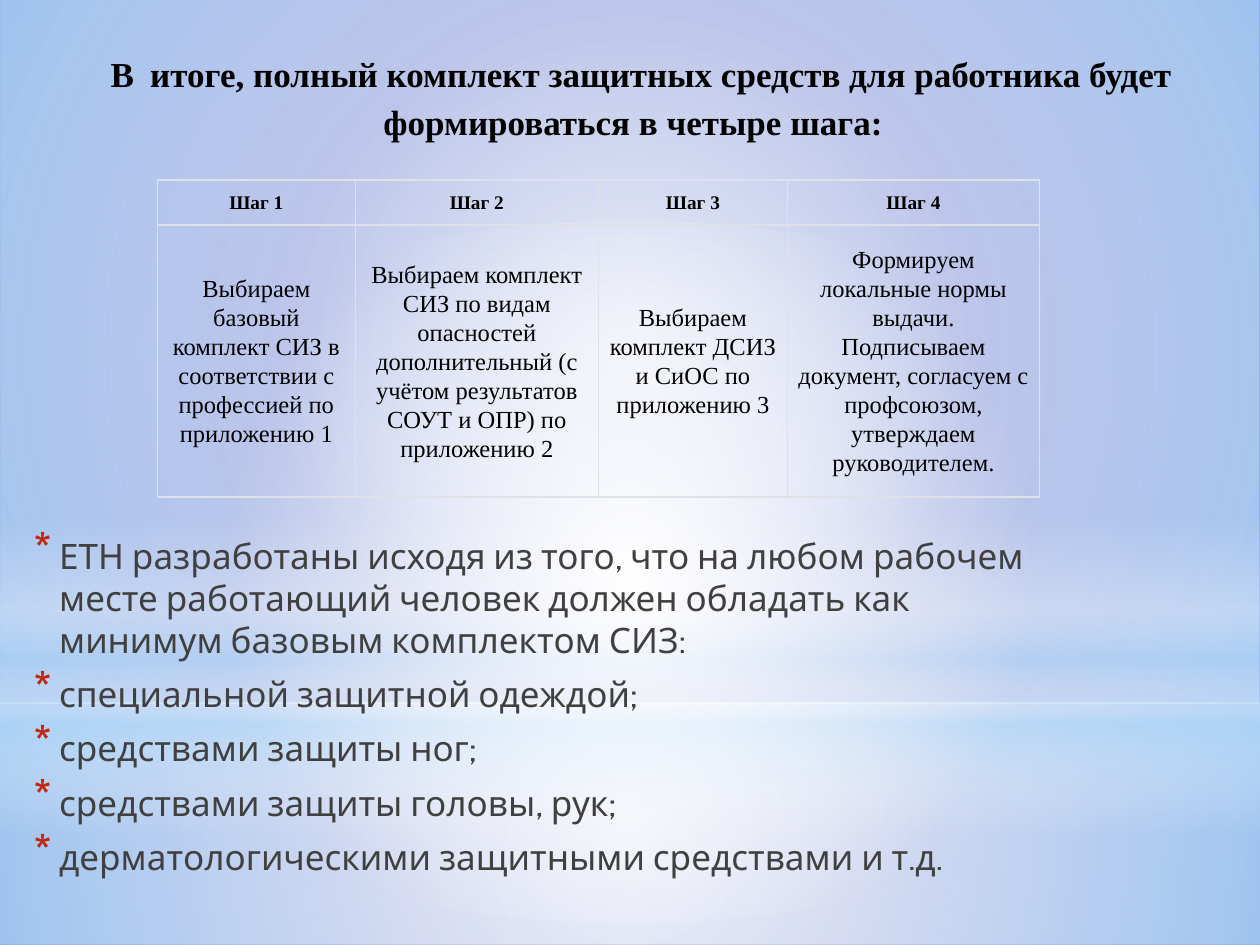
import dataclasses

import lxml.etree
import pptx
import pptx.dml.color
import pptx.enum.shapes
import pptx.enum.text
import pptx.oxml
import pptx.oxml.ns
import pptx.util

Inches = pptx.util.Inches
Pt = pptx.util.Pt
Align = pptx.enum.text.PP_ALIGN
Anchor = pptx.enum.text.MSO_ANCHOR
Shape = pptx.enum.shapes.MSO_SHAPE


@dataclasses.dataclass(frozen=True)
class Theme:
    # Colours
    background: str = "4E67C8"
    white: str = "FFFFFF"
    sky: str = "B4DCFA"
    ink: str = "000000"
    body: str = "404040"
    bullet: str = "C3260C"
    border: str = "DEE2E6"
    # Fonts and sizes
    serif: str = "Times New Roman"
    sans: str = "Cabin"
    text_size: int = 20
    wide_space_size: int = 37
    header_size: int = 11
    cell_size: int = 14


def color(value):
    return pptx.dml.color.RGBColor.from_string(value)


def apply(target, values):
    for name, value in values.items():
        setattr(target, name, value)


def add_xml(parent, tag, **attributes):
    element = lxml.etree.SubElement(parent, pptx.oxml.ns.qn(tag))
    for name, value in attributes.items():
        element.set(name, str(value))
    return element


class SlideBuilder:
    def __init__(self, slide, theme):
        self.slide = slide
        self.theme = theme

    def style_font(self, font, name, size, ink, bold=False):
        apply(font, {"name": name, "size": Pt(size), "bold": bold})
        font.color.rgb = color(ink)

    def background(self):
        fill = self.slide.background.fill
        fill.solid()
        fill.fore_color.rgb = color(self.theme.background)

    def glow(self, kind, box, stops, angle=None):
        """Shape with a transparent gradient: radial unless an angle is given."""
        shape = self.slide.shapes.add_shape(kind, *map(Inches, box))
        shape.shadow.inherit = False
        shape.line.fill.background()
        properties = shape._element.spPr
        gradient = add_xml(properties, "a:gradFill", rotWithShape=1)
        stop_list = add_xml(gradient, "a:gsLst")
        for position, value, opacity in stops:
            stop = add_xml(stop_list, "a:gs", pos=position * 1000)
            add_xml(add_xml(stop, "a:srgbClr", val=value), "a:alpha", val=opacity * 1000)
        if angle is None:
            route = add_xml(gradient, "a:path", path="circle")
            add_xml(route, "a:fillToRect", l=50000, t=50000, r=50000, b=50000)
        else:
            add_xml(gradient, "a:lin", ang=angle * 60000, scaled=0)
        properties.insert(2, gradient)

    def title(self, box, parts):
        shape = self.slide.shapes.title
        left, top, width, height = map(Inches, box)
        apply(shape, {"left": left, "top": top, "width": width, "height": height})
        # Bring the title in front of the backdrop
        self.slide.shapes._spTree.append(shape._element)
        frame = shape.text_frame
        apply(frame, {"word_wrap": True, "vertical_anchor": Anchor.TOP,
                      "auto_size": pptx.enum.text.MSO_AUTO_SIZE.NONE})
        paragraph = frame.paragraphs[0]
        apply(paragraph, {"alignment": Align.CENTER, "space_before": Pt(4)})
        paragraph._p.get_or_add_pPr().set("marL", str(Inches(0.05)))
        for text, size in parts:
            run = paragraph.add_run()
            run.text = text
            self.style_font(run.font, self.theme.serif, size, self.theme.ink, True)

    def bullets(self, box, items):
        frame = self.slide.shapes.add_textbox(*map(Inches, box)).text_frame
        frame.word_wrap = True
        for index, text in enumerate(items):
            paragraph = frame.add_paragraph() if index else frame.paragraphs[0]
            paragraph.text = text
            apply(paragraph, {"alignment": Align.LEFT,
                              "space_before": Pt(4), "space_after": Pt(3)})
            self.style_font(paragraph.runs[0].font, self.theme.sans,
                            self.theme.text_size, self.theme.body)
            properties = paragraph._p.get_or_add_pPr()
            properties.set("marL", str(Inches(0.25)))
            properties.set("indent", str(Inches(-0.2)))
            add_xml(add_xml(properties, "a:buClr"), "a:srgbClr", val=self.theme.bullet)
            add_xml(properties, "a:buSzPct", val=130000)
            add_xml(properties, "a:buChar", char="*")

    def cell(self, cell, text, size, bold):
        margin = Inches(0.08)
        apply(cell, {"vertical_anchor": Anchor.MIDDLE, "margin_left": margin,
                     "margin_right": margin, "margin_top": margin, "margin_bottom": margin})
        cell.fill.background()
        paragraph = cell.text_frame.paragraphs[0]
        paragraph.text = text
        apply(paragraph, {"alignment": Align.CENTER, "line_spacing": 1.07})
        # The paragraph font also sizes line breaks and the paragraph end
        paragraph.font.size = Pt(size)
        for line_break in paragraph._p.findall(pptx.oxml.ns.qn("a:br")):
            add_xml(line_break, "a:rPr", sz=size * 100)
        add_xml(paragraph._p, "a:endParaRPr", sz=size * 100)
        for run in paragraph.runs:
            self.style_font(run.font, self.theme.serif, size, self.theme.ink, bold)
        # Borders come before the fill
        properties = cell._tc.get_or_add_tcPr()
        for index, side in enumerate(("a:lnL", "a:lnR", "a:lnT", "a:lnB")):
            line = add_xml(properties, side, w=Pt(1))
            add_xml(add_xml(line, "a:solidFill"), "a:srgbClr", val=self.theme.border)
            properties.insert(index, line)

    def table(self, left, top, widths, heights, rows):
        box = map(Inches, (left, top, sum(widths), sum(heights)))
        table = self.slide.shapes.add_table(len(rows), len(widths), *box).table
        apply(table, {"first_row": False, "horz_banding": False})
        for column, width in zip(table.columns, widths):
            column.width = Inches(width)
        for index, (height, texts) in enumerate(zip(heights, rows)):
            table.rows[index].height = Inches(height)
            is_header = index == 0
            size = self.theme.header_size if is_header else self.theme.cell_size
            for column, text in enumerate(texts):
                self.cell(table.cell(index, column), text, size, is_header)


def main():
    theme = Theme()
    presentation = pptx.Presentation()
    presentation.slide_width = Inches(10)
    presentation.slide_height = Inches(7.5)
    slide = presentation.slides.add_slide(presentation.slide_layouts[5])
    builder = SlideBuilder(slide, theme)
    white, sky = theme.white, theme.sky

    # Backdrop
    builder.background()
    builder.glow(Shape.RECTANGLE, (0, 5.58, 10, 1.92),
                 [(0, white, 91), (37, white, 76), (100, sky, 79)])
    builder.glow(Shape.RECTANGLE, (0, 0, 10, 5.58),
                 [(0, white, 89), (48, white, 62), (100, sky, 79)])
    builder.glow(Shape.RECTANGLE, (0, 4.12, 10, 2.5),
                 [(0, white, 0), (29, white, 30), (45, sky, 40),
                  (55, white, 26), (65, sky, 60), (100, white, 0)], angle=90)
    builder.glow(Shape.OVAL, (0, 1.75, 10, 5.58), [(0, white, 100), (56, white, 0)])

    # Title
    wide_space = (" ", theme.wide_space_size)
    builder.title((0.12, 0.13, 9.76, 1.2), [
        wide_space, ("В", theme.text_size), wide_space,
        ("итоге, полный комплект защитных средств для работника будет "
         "формироваться в четыре шага:", theme.text_size),
    ])

    # Bulleted list
    builder.bullets((0.12, 4.19, 8.28, 3.11), [
        "ЕТН разработаны исходя из того, что на любом рабочем месте работающий "
        "человек должен обладать как минимум базовым комплектом СИЗ:",
        "специальной защитной одеждой;",
        "средствами защиты ног;",
        "средствами защиты головы, рук;",
        "дерматологическими защитными средствами и т.д.",
    ])

    # Table of steps
    builder.table(1.25, 1.43, (1.57, 1.93, 1.5, 2), (0.35, 2), [
        [f"Шаг {number}" for number in range(1, 5)],
        ["Выбираем базовый комплект СИЗ в соответствии с профессией по приложению 1",
         "Выбираем комплект СИЗ по видам опасностей дополнительный "
         "(с учётом результатов СОУТ и ОПР) по приложению 2",
         "Выбираем комплект ДСИЗ и СиОС по приложению 3",
         "Формируем локальные нормы выдачи.\nПодписываем документ, "
         "согласуем с профсоюзом, утверждаем руководителем."],
    ])

    presentation.save("out.pptx")


if __name__ == "__main__":
    main()
